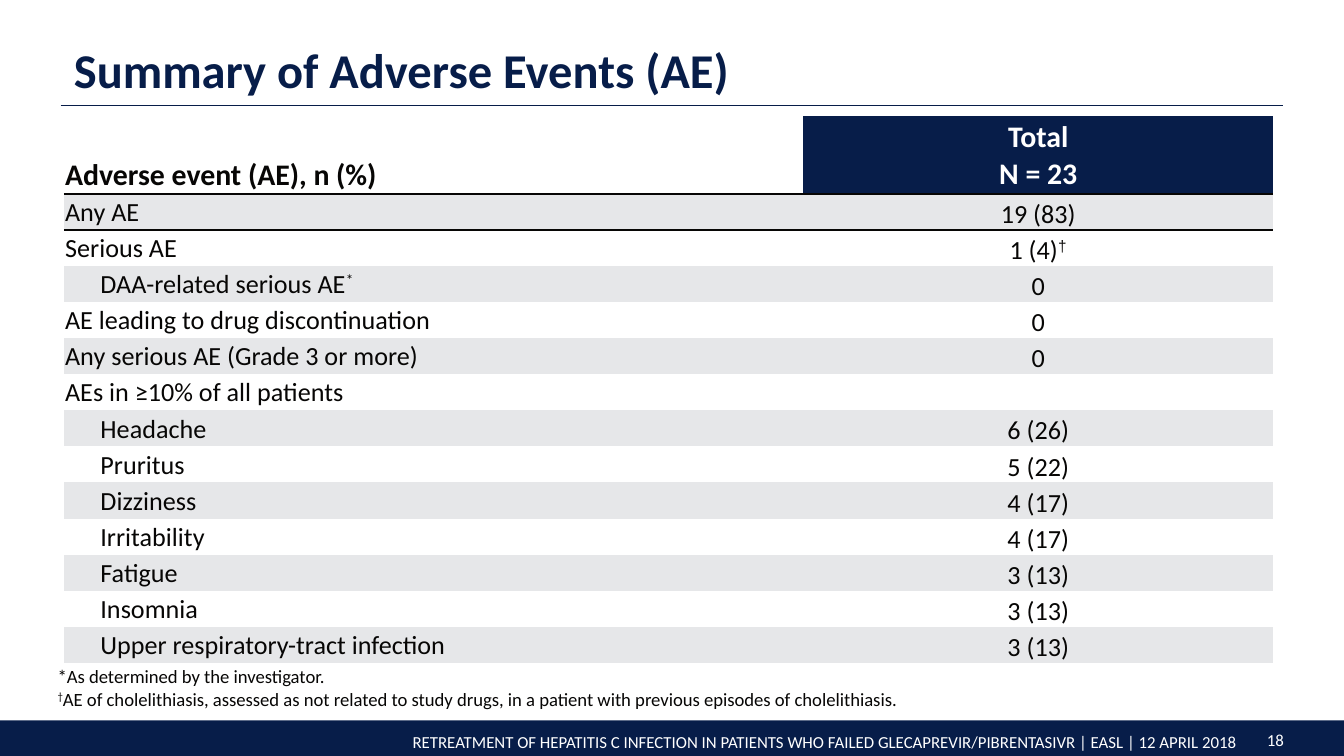
"""Build the adverse event summary slide with its table, footnotes and footer."""
from lxml import etree
from pptx import Presentation
from pptx.dml.color import RGBColor
from pptx.enum import shapes, text
from pptx.oxml import ns
from pptx.util import Pt

COLORS = {"navy": "071D49", "ink": "070605", "band": "E6E7E9", "white": "FFFFFF"}
LEFT, CENTER, RIGHT = text.PP_ALIGN.LEFT, text.PP_ALIGN.CENTER, text.PP_ALIGN.RIGHT
TOP, MIDDLE, BOTTOM = text.MSO_ANCHOR.TOP, text.MSO_ANCHOR.MIDDLE, text.MSO_ANCHOR.BOTTOM


def write(frame, lines, size, color, bold=False, align=LEFT, spacing=1.0, mark_font="Calibri"):
    for index, line in enumerate(lines):
        paragraph = frame.add_paragraph() if index else frame.paragraphs[0]
        paragraph.alignment, paragraph.line_spacing = align, spacing
        for position, part in enumerate(line.split("^")):
            if not part:
                continue
            run = paragraph.add_run()
            run.text = part
            raised = position % 2 == 1
            formats = {"name": mark_font if raised else "Calibri", "size": Pt(size), "bold": bold}
            for key, value in formats.items():
                setattr(run.font, key, value)
            run.font.color.rgb = RGBColor.from_string(COLORS[color])
            if raised:
                run.font._element.set("baseline", "30000")


def add_label(box, lines, anchor=TOP, **formats):
    frame = slide.shapes.add_textbox(*map(Pt, box)).text_frame
    frame.word_wrap, frame.vertical_anchor = True, anchor
    write(frame, lines, **formats)


prs = Presentation()
prs.slide_width, prs.slide_height = Pt(720), Pt(405)
slide = prs.slides.add_slide(prs.slide_layouts[6])

footer = slide.shapes.add_shape(shapes.MSO_SHAPE.RECTANGLE, Pt(0), Pt(386), Pt(720), Pt(19))
footer.shadow.inherit = False
footer.fill.solid()
footer.fill.fore_color.rgb = RGBColor.from_string(COLORS["navy"])
footer.line.fill.background()
add_label((-25, 388.3, 694, 18),
          ["RETREATMENT OF HEPATITIS C INFECTION IN PATIENTS WHO FAILED "
           "GLECAPREVIR/PIBRENTASIVR | EASL | 12 APRIL 2018"],
          size=9, color="white", align=RIGHT)
add_label((669.5, 388.8, 27.5, 17), ["18"], size=9, color="white", align=CENTER, spacing=0.9)

title_rule = slide.shapes.add_connector(
    shapes.MSO_CONNECTOR.STRAIGHT, Pt(32.5), Pt(56.6), Pt(687.5), Pt(56.6))
title_rule.line.color.rgb = RGBColor.from_string(COLORS["navy"])
title_rule.line.width = Pt(0.75)
etree.SubElement(title_rule._element.spPr, ns.qn("a:effectLst"))
add_label((32.5, 15, 655, 41.6), ["Summary of Adverse Events (AE)"], anchor=BOTTOM,
          size=26, color="navy", bold=True, spacing=0.9)

events = [
    ("Any AE", "19 (83)", 0),
    ("Serious AE", "1 (4)^†^", 0),
    ("DAA-related serious AE^*^", "0", 1),
    ("AE leading to drug discontinuation", "0", 0),
    ("Any serious AE (Grade 3 or more)", "0", 0),
    ("AEs in ≥10% of all patients", "", 0),
    ("Headache", "6 (26)", 1),
    ("Pruritus", "5 (22)", 1),
    ("Dizziness", "4 (17)", 1),
    ("Irritability", "4 (17)", 1),
    ("Fatigue", "3 (13)", 1),
    ("Insomnia", "3 (13)", 1),
    ("Upper respiratory-tract infection", "3 (13)", 1),
]
header_height, row_height, indent = 41.8, 19.28, 18.9
summary = slide.shapes.add_table(
    len(events) + 1, 2, Pt(34.2), Pt(62.1), Pt(648),
    Pt(header_height + row_height * len(events))).table
summary.first_row = summary.horz_banding = False
summary._tbl.tblPr.find(ns.qn("a:tableStyleId")).text = "{2D5ABB26-0587-4C30-8999-92F81FD0307C}"
for column, width in zip(summary.columns, (396, 252)):
    column.width = Pt(width)

for index, row in enumerate(summary.rows):
    row.height = Pt(row_height if index else header_height)
    for column, cell in enumerate(row.cells):
        is_count = index > 0 and column == 1
        side, top = (5, 0) if is_count else (0.7, 0.7)
        layout = {"margin_left": Pt(side), "margin_right": Pt(side), "margin_top": Pt(top),
                  "margin_bottom": Pt(0), "vertical_anchor": MIDDLE}
        for key, value in layout.items():
            setattr(cell, key, value)
        if index:
            fill = "band" if index % 2 else "white"
        else:
            fill = "navy" if column else "white"
        cell.fill.solid()
        cell.fill.fore_color.rgb = RGBColor.from_string(COLORS[fill])
        if index < 2:
            border = etree.Element(ns.qn("a:lnT" if index else "a:lnB"), w=str(Pt(1)))
            solid = etree.SubElement(border, ns.qn("a:solidFill"))
            etree.SubElement(solid, ns.qn("a:srgbClr"), val=COLORS["ink"])
            cell._tc.tcPr.insert(0, border)

event_head, total_head = summary.rows[0].cells
event_head.vertical_anchor = BOTTOM
write(event_head.text_frame, ["Adverse event (AE), n (%)"], 16, "ink", bold=True)
write(total_head.text_frame, ["Total", "N = 23"], 16, "white", bold=True, align=CENTER)
for index, (event, count, level) in enumerate(events, 1):
    event_cell, count_cell = summary.rows[index].cells
    write(event_cell.text_frame, [event], 14, "ink")
    event_cell.text_frame.paragraphs[0]._p.get_or_add_pPr().set("marL", str(Pt(indent * level)))
    write(count_cell.text_frame, [count], 14, "ink", align=CENTER, spacing=1.15,
          mark_font="Courier New")
    if not count:
        etree.SubElement(count_cell.text_frame.paragraphs[0]._p, ns.qn("a:endParaRPr"), sz="1200")

add_label((23.8, 352.8, 664, 31.7),
          ["*As determined by the investigator.",
           "^†^AE of cholelithiasis, assessed as not related to study drugs, "
           "in a patient with previous episodes of cholelithiasis."],
          size=10, color="ink")

prs.save("out.pptx")
